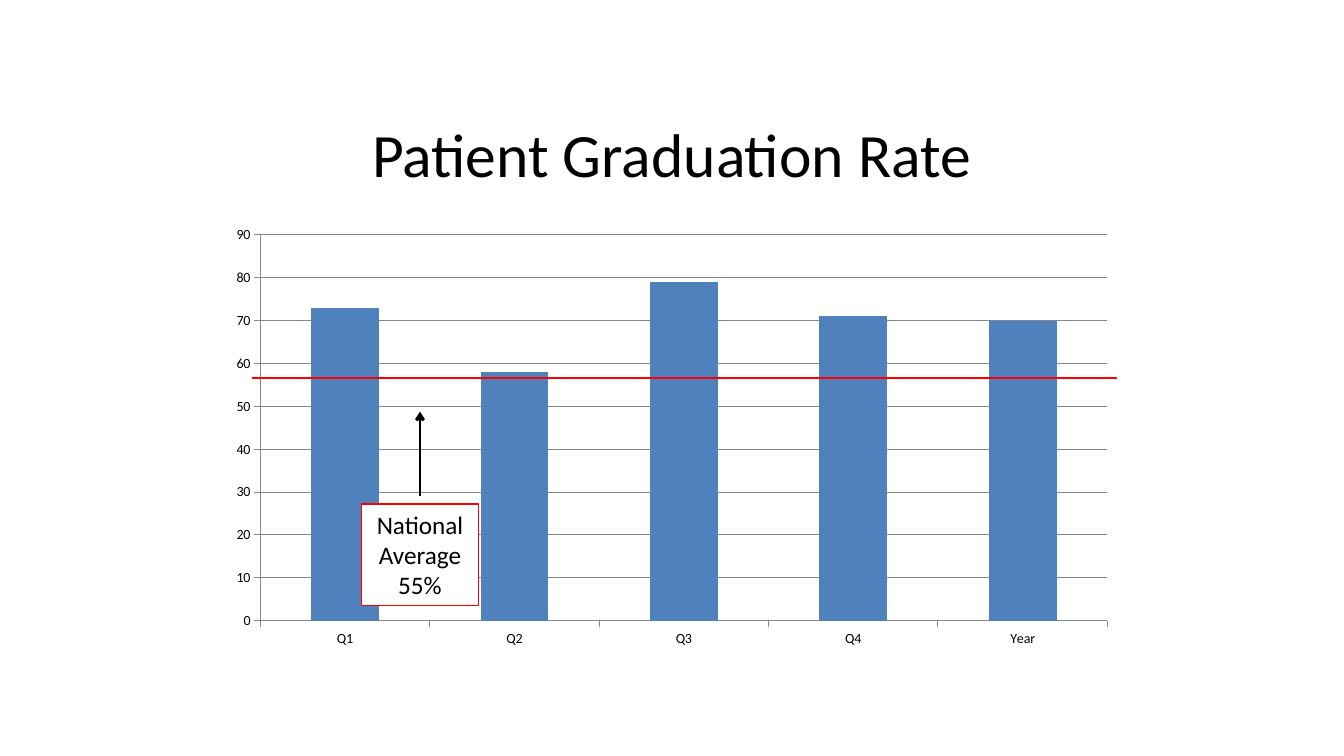
from dataclasses import dataclass
from typing import Any

from lxml.etree import SubElement
from pptx import Presentation
from pptx.chart.data import CategoryChartData
from pptx.dml.color import RGBColor
from pptx.enum.chart import XL_CHART_TYPE, XL_LEGEND_POSITION, XL_TICK_MARK
from pptx.enum.shapes import MSO_CONNECTOR, MSO_SHAPE
from pptx.enum.text import MSO_ANCHOR, MSO_AUTO_SIZE, PP_ALIGN
from pptx.oxml.ns import qn
from pptx.util import Inches, Pt

COLUMNS, ROWS = 160, 90
CELL = Inches(1) // 12


@dataclass(frozen=True)
class Theme:
    font: str = "Calibri"
    ink: RGBColor = RGBColor(0, 0, 0)
    paper: RGBColor = RGBColor(255, 255, 255)
    bar: RGBColor = RGBColor(0x4F, 0x81, 0xBD)
    average: RGBColor = RGBColor(255, 0, 0)
    grid: RGBColor = RGBColor(0x87, 0x87, 0x87)
    title_size: int = 44
    label_size: int = 18
    axis_size: int = 10
    stroke: float = 2
    hairline: float = 0.75


THEME = Theme()


@dataclass(frozen=True)
class Area:
    """A rectangle in grid columns and rows."""
    column: float
    row: float
    width: float
    height: float

    def emu(self) -> tuple[int, ...]:
        return tuple(round(n * CELL)
                     for n in (self.column, self.row, self.width, self.height))


@dataclass(frozen=True)
class Rule:
    """A straight line between two grid points."""
    start: tuple[int, int]
    end: tuple[int, int]
    color: RGBColor
    arrow: bool = False


TITLE_AREA = Area(8, 12, 144, 12.4)
CHART_AREA = Area(26, 26, 108, 52)
LABEL_AREA = Area(43, 60, 14, 12.12)
AVERAGE_LINE = Rule((30, 45), (133, 45), THEME.average)
LABEL_ARROW = Rule((50, 59), (50, 49), THEME.ink, arrow=True)
GRADUATION = {"Q1": 73, "Q2": 58, "Q3": 79, "Q4": 71, "Year": 70}


def apply(target: Any, formats: dict[str, Any]) -> None:
    for attribute, value in formats.items():
        setattr(target, attribute, value)


def style_font(font: Any, size: int) -> None:
    apply(font, {"name": THEME.font, "size": Pt(size)})
    font.color.rgb = THEME.ink


def style_line(line: Any, color: RGBColor, weight: float) -> None:
    line.color.rgb = color
    line.width = Pt(weight)


def write(shape: Any, text: str, size: int, formats: dict[str, Any]) -> None:
    apply(shape.text_frame, {"word_wrap": True, **formats})
    paragraph = shape.text_frame.paragraphs[0]
    paragraph.alignment = PP_ALIGN.CENTER
    run = paragraph.add_run()
    run.text = text
    style_font(run.font, size)


def draw_chart(slide: Any) -> None:
    data = CategoryChartData()
    data.categories = list(GRADUATION)
    data.add_series("Series 1", list(GRADUATION.values()))
    chart = slide.shapes.add_chart(
        XL_CHART_TYPE.COLUMN_CLUSTERED, *CHART_AREA.emu(), data).chart
    apply(chart, {"has_title": False, "has_legend": False})
    style_font(chart.font, THEME.axis_size)
    apply(chart.plots[0], {"gap_width": 150, "vary_by_categories": False})
    bars = chart.plots[0].series[0].format.fill
    bars.solid()
    bars.fore_color.rgb = THEME.bar
    apply(chart.value_axis, {"minimum_scale": 0, "maximum_scale": 90,
                             "major_unit": 10, "has_major_gridlines": True})
    for axis in (chart.category_axis, chart.value_axis):
        apply(axis, {"major_tick_mark": XL_TICK_MARK.OUTSIDE,
                     "minor_tick_mark": XL_TICK_MARK.NONE})
        style_line(axis.format.line, THEME.grid, THEME.hairline)
    style_line(chart.value_axis.major_gridlines.format.line,
               THEME.grid, THEME.hairline)


def draw_rule(slide: Any, rule: Rule) -> None:
    points = [n * CELL for n in (*rule.start, *rule.end)]
    connector = slide.shapes.add_connector(MSO_CONNECTOR.STRAIGHT, *points)
    style_line(connector.line, rule.color, THEME.stroke)
    properties = connector.line._get_or_add_ln()
    if rule.arrow:
        SubElement(properties, qn("a:tailEnd"), type="arrow")
    SubElement(properties.getparent(), qn("a:effectLst"))


def draw_label(slide: Any) -> None:
    label = slide.shapes.add_shape(MSO_SHAPE.RECTANGLE, *LABEL_AREA.emu())
    label.shadow.inherit = False
    label.fill.solid()
    label.fill.fore_color.rgb = THEME.paper
    style_line(label.line, THEME.average, THEME.hairline)
    write(label, "National Average 55%", THEME.label_size,
          {"vertical_anchor": MSO_ANCHOR.TOP,
           "auto_size": MSO_AUTO_SIZE.SHAPE_TO_FIT_TEXT})


def main() -> None:
    deck = Presentation()
    apply(deck, {"slide_width": COLUMNS * CELL, "slide_height": ROWS * CELL})
    slide = deck.slides.add_slide(deck.slide_layouts[6])
    title = slide.shapes.add_textbox(*TITLE_AREA.emu())
    write(title, "Patient Graduation Rate", THEME.title_size,
          {"vertical_anchor": MSO_ANCHOR.MIDDLE})
    draw_chart(slide)
    draw_rule(slide, AVERAGE_LINE)
    draw_label(slide)
    draw_rule(slide, LABEL_ARROW)
    deck.save("out.pptx")


if __name__ == "__main__":
    main()
